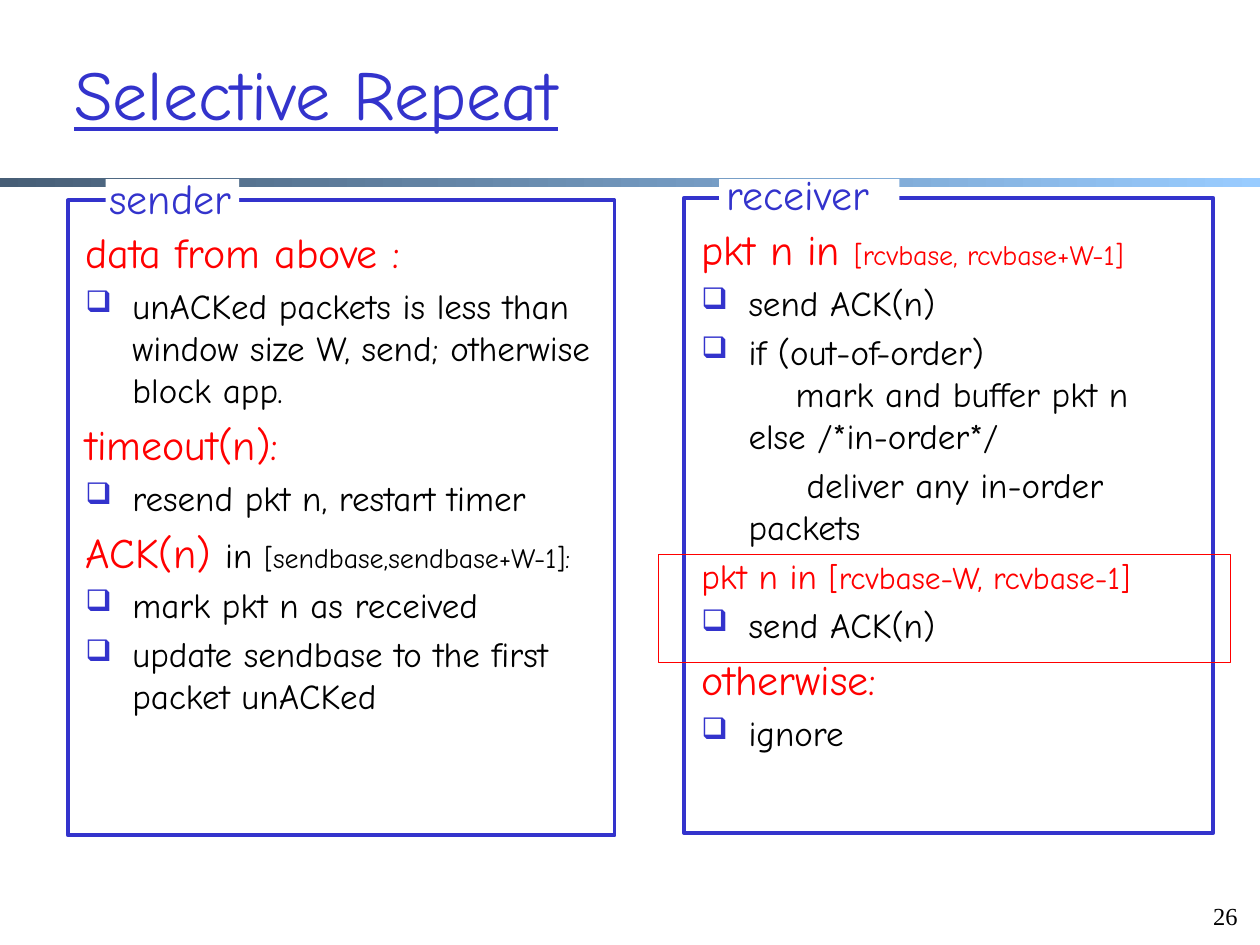
from lxml import etree
from pptx import Presentation
from pptx.dml.color import RGBColor
from pptx.enum.shapes import MSO_SHAPE
from pptx.enum.text import MSO_ANCHOR, PP_ALIGN
from pptx.oxml.ns import qn
from pptx.util import Cm, Pt

RECT = MSO_SHAPE.RECTANGLE
MIDDLE, BOTTOM = MSO_ANCHOR.MIDDLE, MSO_ANCHOR.BOTTOM
LEFT, RIGHT = PP_ALIGN.LEFT, PP_ALIGN.RIGHT
FACE = "Comic Neue"
BLUE, RED, BLACK, WHITE = "3333CC", "FF0000", "000000", "FFFFFF"
HANG = 0.95

SENDER = [
    ("head", [("data from above :", 24, RED)]),
    ("item", [("unACKed packets is less than window size W, send; otherwise block app.", 20, BLACK)]),
    ("head", [("timeout(n):", 24, RED)]),
    ("item", [("resend pkt n, restart timer", 20, BLACK)]),
    ("head", [("ACK(n) ", 24, RED), ("in ", 20, BLACK), ("[sendbase,sendbase+W-1]:", 16, BLACK)]),
    ("item", [("mark pkt n as received", 20, BLACK)]),
    ("item", [("update sendbase to the first packet unACKed", 20, BLACK)]),
]
RECEIVER = [
    ("head", [("pkt n in ", 24, RED), ("[rcvbase, rcvbase+W-1]", 16, RED)]),
    ("item", [("send ACK(n)", 20, BLACK)]),
    ("item", [("if (out-of-order)", 20, BLACK)]),
    ("deep", [("mark and buffer pkt n", 20, BLACK)]),
    ("more", [("else /*in-order*/", 20, BLACK)]),
    ("first", [("deliver any in-order packets", 20, BLACK)]),
    ("head", [("pkt n in ", 20, RED), ("[rcvbase-W, rcvbase-1]", 18, RED)]),
    ("item", [("send ACK(n)", 20, BLACK)]),
    ("head", [("otherwise:", 24, RED)]),
    ("item", [("ignore", 20, BLACK)]),
]
KINDS = {
    "head": (HANG, -HANG, 0.2),
    "item": (HANG, -HANG, 0.2),
    "deep": (1.9, 0, 0),
    "more": (HANG, 0, 0),
    "first": (HANG, 1.17, 0.2),
}


def rgb(code):
    """Turn a hex string into a colour."""
    return RGBColor.from_string(code)


def style(font, size, color, face=FACE):
    """Set the size, colour and face of a font."""
    font.name = face
    font.size = Pt(size)
    font.color.rgb = rgb(color)


def add_rect(slide, box, fill=None, line=None, width=1):
    """Add a plain rectangle with an optional fill and line."""
    shape = slide.shapes.add_shape(RECT, *map(Cm, box))
    shape.shadow.inherit = False
    if fill:
        shape.fill.solid()
        shape.fill.fore_color.rgb = rgb(fill)
    else:
        shape.fill.background()
    if line:
        shape.line.color.rgb = rgb(line)
        shape.line.width = Pt(width)
    else:
        shape.line.fill.background()
    return shape


def add_band(slide):
    """Add the shaded band below the title."""
    fill = add_rect(slide, (0, 3.58, 25.4, 0.2), WHITE).fill
    fill.gradient()
    fill.gradient_angle = 0
    for stop, place, code in zip(fill.gradient_stops, (0, 1), ("475E76", "99CCFF")):
        stop.position = place
        stop.color.rgb = rgb(code)


def add_text(slide, box):
    """Add a wrapping text box and return its frame."""
    frame = slide.shapes.add_textbox(*map(Cm, box)).text_frame
    frame.word_wrap = True
    return frame


def add_label(slide, patch, box, text):
    """Add a panel name on a white patch."""
    add_rect(slide, patch, WHITE)
    para = add_text(slide, box).paragraphs[0]
    para.text = text
    style(para.font, 24, BLUE)


def add_bullet(para):
    """Give a paragraph a blue box bullet."""
    props = para._p.get_or_add_pPr()
    color = etree.SubElement(props, qn("a:buClr"))
    etree.SubElement(color, qn("a:srgbClr"), val=BLUE)
    etree.SubElement(props, qn("a:buSzPct"), val="85000")
    etree.SubElement(props, qn("a:buChar"), char="❑")


def add_list(slide, box, rows):
    """Add a text box with headings, bullets and indented lines."""
    frame = add_text(slide, box)
    for index, (kind, runs) in enumerate(rows):
        para = frame.add_paragraph() if index else frame.paragraphs[0]
        margin, indent, share = KINDS[kind]
        props = para._p.get_or_add_pPr()
        props.set("marL", str(int(Cm(margin))))
        props.set("indent", str(int(Cm(indent))))
        para.space_before = Pt(share * runs[0][1])
        if kind == "item":
            add_bullet(para)
        style(para.font, *runs[0][1:])
        for text, size, color in runs:
            run = para.add_run()
            run.text = text
            if len(runs) > 1:
                style(run.font, size, color)


def set_title(slide, text):
    """Place and format the title."""
    title = slide.shapes.title
    title.left, title.top, title.width, title.height = map(Cm, (1.24, 0.69, 21.59, 2.34))
    frame = title.text_frame
    frame.vertical_anchor = MIDDLE
    para = frame.paragraphs[0]
    para.text = text
    para.alignment = LEFT
    style(para.font, 40, BLUE)
    para.font.underline = True


def add_number(slide, text):
    """Add the page number."""
    frame = add_text(slide, (24.03, 17.91, 1.17, 0.97))
    frame.vertical_anchor = BOTTOM
    para = frame.paragraphs[0]
    para.text = text
    para.alignment = RIGHT
    style(para.font, 14, BLACK, "Times New Roman")


def main():
    """Build the slide and save it."""
    deck = Presentation()
    deck.slide_width, deck.slide_height = Cm(25.4), Cm(19.05)
    slide = deck.slides.add_slide(deck.slide_layouts[5])
    add_band(slide)
    set_title(slide, "Selective Repeat")
    add_list(slide, (1.47, 4.45, 11.46, 13.28), SENDER)
    add_rect(slide, (1.37, 4.04, 11.02, 12.8), line=BLUE, width=2.25)
    add_label(slide, (2.13, 3.61, 2.69, 0.79), (1.96, 3.35, 3.2, 1.27), "sender")
    add_list(slide, (13.89, 4.39, 10.59, 12.9), RECEIVER)
    add_rect(slide, (13.79, 3.99, 10.67, 12.8), line=BLUE, width=2.25)
    add_label(slide, (14.5, 3.61, 3.63, 0.79), (14.4, 3.28, 3.78, 1.27), "receiver")
    add_number(slide, "26")
    add_rect(slide, (13.28, 11.18, 11.53, 2.18), line=RED, width=0.75)
    deck.save("out.pptx")


if __name__ == "__main__":
    main()
